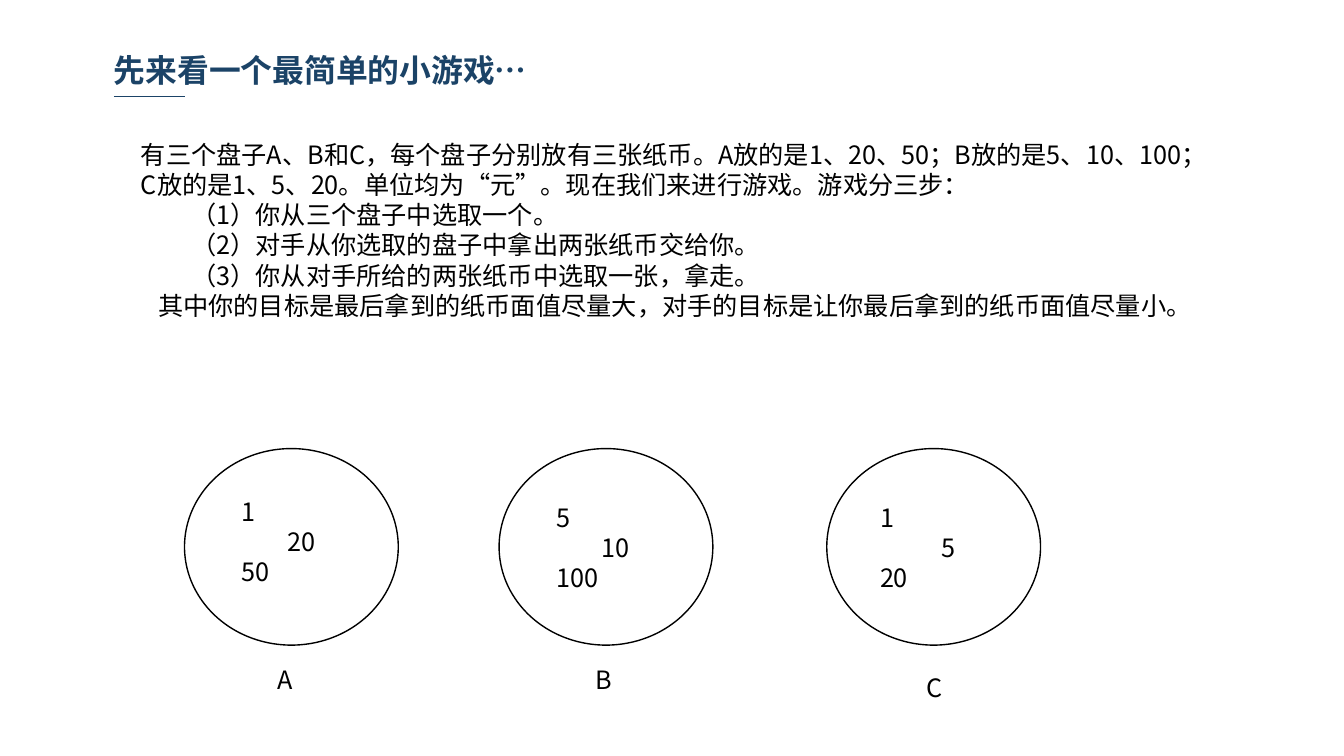
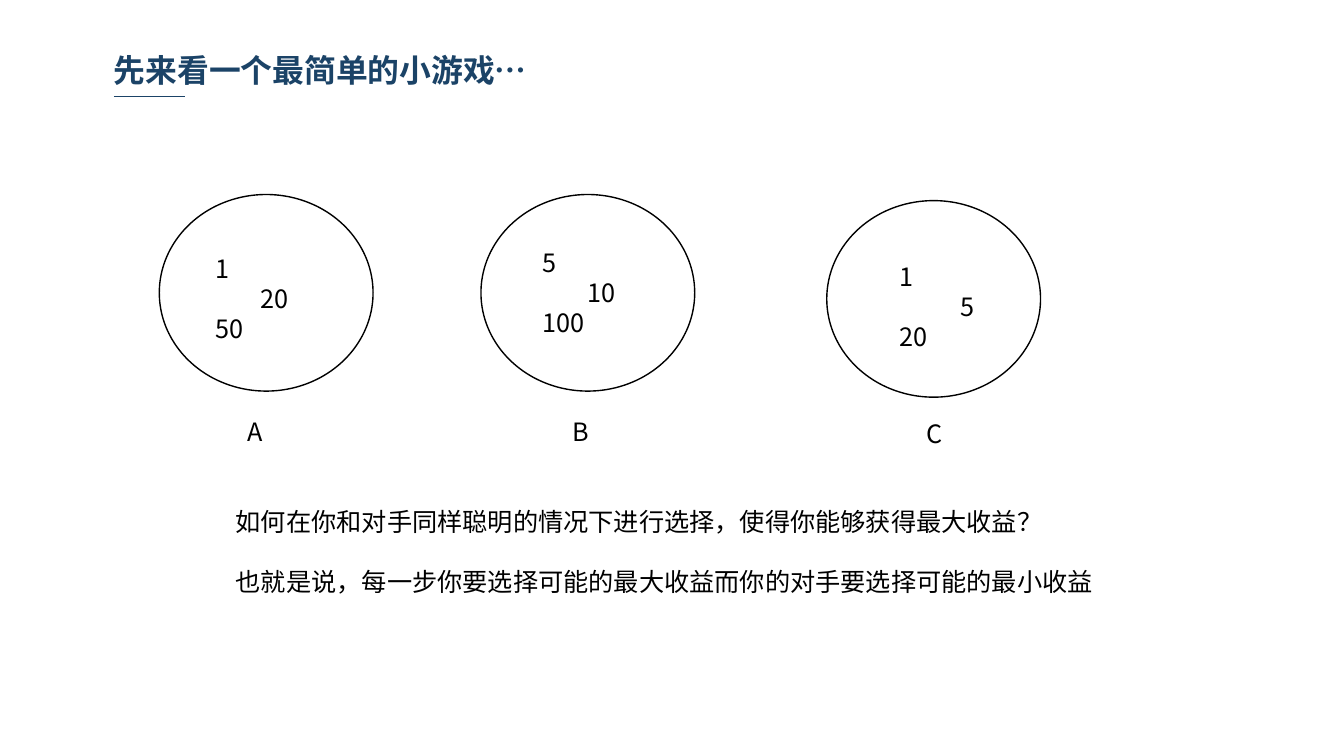
from lxml import etree
from pptx import Presentation
from pptx.dml.color import RGBColor
from pptx.enum.shapes import MSO_CONNECTOR, MSO_SHAPE
from pptx.oxml.ns import qn
from pptx.util import Inches, Pt

OVAL = MSO_SHAPE.OVAL
STRAIGHT = MSO_CONNECTOR.STRAIGHT
FONT = "Noto Sans CJK SC"
NAVY, BLACK, WHITE = "1B4367", "000000", "FFFFFF"
TITLE = "先来看一个最简单的小游戏…"


def rgb(color):
    return RGBColor.from_string(color)


def write(slide, left, top, width, height, lines, size=18, color=BLACK, bold=False):
    """Add a text box; each line is (text, left margin, first-line indent, points before)."""
    box = slide.shapes.add_textbox(Inches(left), Inches(top), Inches(width), Inches(height))
    frame = box.text_frame
    frame.word_wrap = True
    for i, (text, margin, indent, before) in enumerate(lines):
        para = frame.paragraphs[0] if i == 0 else frame.add_paragraph()
        para.text = text
        props = para._p.get_or_add_pPr()
        props.set("marL", str(Inches(margin)))
        props.set("indent", str(Inches(indent)))
        if before:
            para.space_before = Pt(before)
        font = para.font
        font.name, font.size, font.bold = FONT, Pt(size), bold
        font.color.rgb = rgb(color)
        etree.SubElement(font._element, qn("a:ea"), typeface=FONT)


# Notes on each plate, with the indent of the middle one
PLATES = {
    "A": (("1", "20", "50"), 0.45),
    "B": (("5", "10", "100"), 0.45),
    "C": (("1", "5", "20"), 0.61),
}

RULES = [
    ("有三个盘子A、B和C，每个盘子分别放有三张纸币。A放的是1、20、50；B放的是5、10、100；"
     "C放的是1、5、20。单位均为“元”。现在我们来进行游戏。游戏分三步：", 0, 0, 0),
    ("（1）你从三个盘子中选取一个。", 0.5, 0, 0),
    ("（2）对手从你选取的盘子中拿出两张纸币交给你。", 0.5, 0, 0),
    ("（3）你从对手所给的两张纸币中选取一张，拿走。", 0.5, 0, 0),
    ("其中你的目标是最后拿到的纸币面值尽量大，对手的目标是让你最后拿到的纸币面值尽量小。", 0, 0.17, 0),
]
GOAL = [
    ("如何在你和对手同样聪明的情况下进行选择，使得你能够获得最大收益？", 0, 0, 0),
    ("也就是说，每一步你要选择可能的最大收益而你的对手要选择可能的最小收益", 0, 0, 21.8),
]

# Per slide: text box, its lines, and left/top of each plate, its notes and its name
PAGES = [
    ((1.3, 1.33, 10.77, 2.22), RULES, [
        ((1.83, 4.45), (2.3, 4.87), (2.65, 6.54)),
        ((4.95, 4.45), (5.42, 4.93), (5.81, 6.54)),
        ((8.2, 4.45), (8.63, 4.93), (9.09, 6.62)),
    ]),
    ((2.24, 4.97, 9.18, 1.01), GOAL, [
        ((1.58, 1.93), (2.04, 2.46), (2.36, 4.08)),
        ((4.77, 1.93), (5.28, 2.4), (5.58, 4.08)),
        ((8.2, 1.99), (8.82, 2.54), (9.09, 4.1)),
    ]),
]

prs = Presentation()
prs.slide_width, prs.slide_height = Inches(13.33), Inches(7.5)

for area, lines, spots in PAGES:
    slide = prs.slides.add_slide(prs.slide_layouts[6])
    write(slide, 1.03, 0.45, 4.61, 0.48, [(TITLE, 0, 0, 0)], 22.7, NAVY, True)
    rule = slide.shapes.add_connector(
        STRAIGHT, Inches(1.13), Inches(0.96), Inches(1.83), Inches(0.96))
    rule.line.color.rgb = rgb(NAVY)
    rule.line.width = Pt(0.75)
    etree.SubElement(rule._element.spPr, qn("a:effectLst"))

    write(slide, *area, lines)
    for (name, (notes, shift)), (disc, stack, label) in zip(PLATES.items(), spots):
        plate = slide.shapes.add_shape(
            OVAL, Inches(disc[0]), Inches(disc[1]), Inches(2.12), Inches(1.95))
        plate.shadow.inherit = False
        plate.fill.solid()
        plate.fill.fore_color.rgb = rgb(WHITE)
        plate.line.color.rgb = rgb(BLACK)
        plate.line.width = Pt(1)
        first, second, third = notes
        write(slide, *stack, 1.3, 1.01,
              [(first, 0, 0, 0), (second, shift, 0, 0), (third, 0, 0, 0)])
        write(slide, *label, 0.6, 0.4, [(name, 0, 0, 0)])

prs.save("out.pptx")
